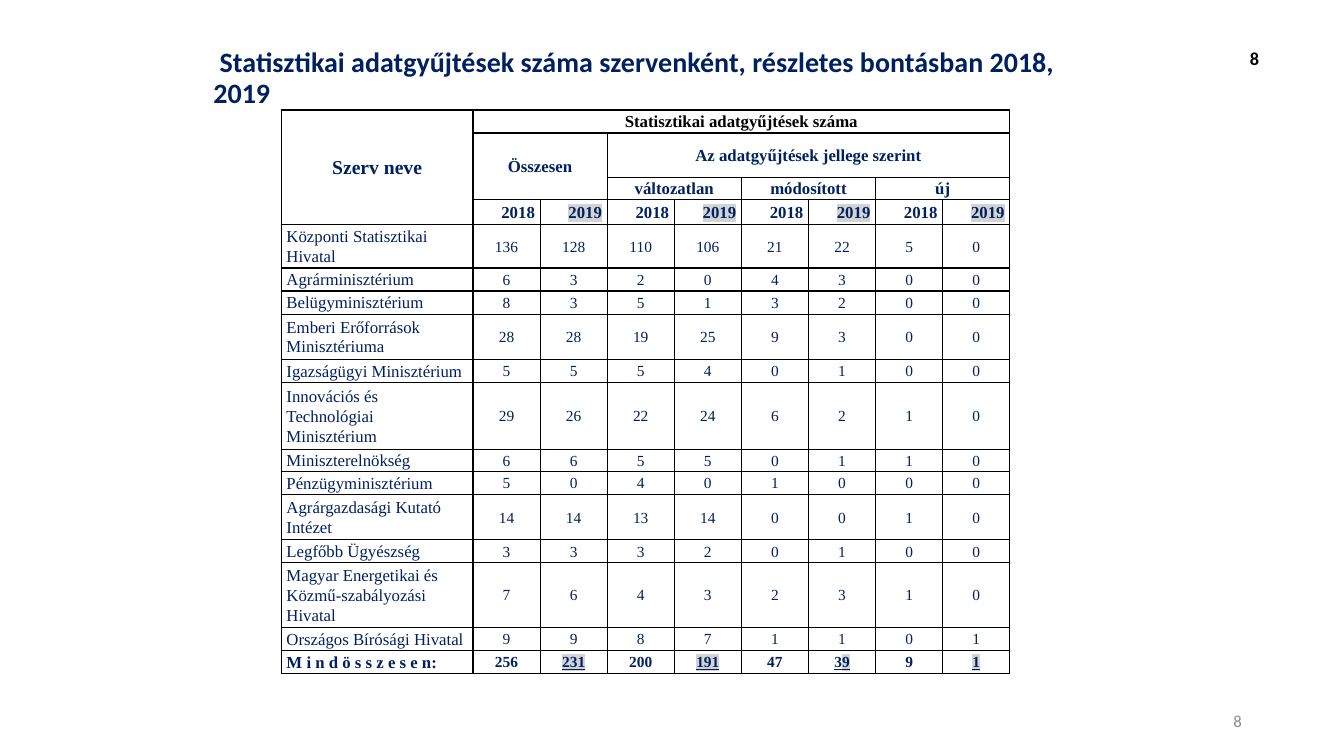
from lxml.etree import SubElement
from pptx import Presentation
from pptx.dml.color import RGBColor
from pptx.enum.text import MSO_ANCHOR as ANCHOR, PP_ALIGN as ALIGN
from pptx.oxml import parse_xml
from pptx.oxml.ns import nsdecls, qn
from pptx.util import Cm, Pt

NAVY = RGBColor(0x00, 0x20, 0x60)
BLACK = RGBColor(0x00, 0x00, 0x00)
GRAY = RGBColor(0x8C, 0x8C, 0x8C)
MARK = RGBColor(0xD3, 0xD3, 0xD3)
SANS, SERIF = "Calibri", "Times New Roman"

TITLE = " Statisztikai adatgyűjtések száma szervenként, részletes bontásban 2018, 2019"
HEADERS = [
    (0, 0, 3, 0, "Szerv neve", 14, NAVY),
    (0, 1, 0, 8, "Statisztikai adatgyűjtések száma", 12, BLACK),
    (1, 1, 2, 2, "Összesen", 12, NAVY),
    (1, 3, 1, 8, "Az adatgyűjtések jellege szerint", 12, NAVY),
    (2, 3, 2, 4, "változatlan", 12, NAVY),
    (2, 5, 2, 6, "módosított", 12, NAVY),
    (2, 7, 2, 8, "új", 12, NAVY),
]
HEADER_HEIGHTS = [0.58, 1.12, 0.56, 0.56]
BODY = [
    ("Központi Statisztikai Hivatal", 1.09, [136, 128, 110, 106, 21, 22, 5, 0]),
    ("Agrárminisztérium", 0.58, [6, 3, 2, 0, 4, 3, 0, 0]),
    ("Belügyminisztérium", 0.58, [8, 3, 5, 1, 3, 2, 0, 0]),
    ("Emberi Erőforrások Minisztériuma", 1.14, [28, 28, 19, 25, 9, 3, 0, 0]),
    ("Igazságügyi Minisztérium", 0.58, [5, 5, 5, 4, 0, 1, 0, 0]),
    ("Innovációs és Technológiai Minisztérium", 1.7, [29, 26, 22, 24, 6, 2, 1, 0]),
    ("Miniszterelnökség", 0.55, [6, 6, 5, 5, 0, 1, 1, 0]),
    ("Pénzügyminisztérium", 0.58, [5, 0, 4, 0, 1, 0, 0, 0]),
    ("Agrárgazdasági Kutató Intézet", 1.14, [14, 14, 13, 14, 0, 0, 1, 0]),
    ("Legfőbb Ügyészség", 0.58, [3, 3, 3, 2, 0, 1, 0, 0]),
    ("Magyar Energetikai és Közmű-szabályozási Hivatal", 1.63, [7, 6, 4, 3, 2, 3, 1, 0]),
    ("Országos Bírósági Hivatal", 0.58, [9, 9, 8, 7, 1, 1, 0, 1]),
]
TOTAL_HEIGHT = 0.58
TOTAL_LABEL = "M i n d ö s s z e s e n:"
TOTALS = [256, 231, 200, 191, 47, 39, 9, 1]
UNMARKED_DIGITS = {5: 1}


def write(p, text, size=12, font=SERIF, color=NAVY, bold=False, underline=False,
          mark=False, align=ALIGN.LEFT, spacing=1.07):
    p.alignment = align
    p.line_spacing = spacing
    r = p.add_run()
    r.text = text
    r.font.size = Pt(size)
    r.font.bold = bold
    r.font.underline = underline
    r.font.color.rgb = color
    r.font.name = font
    if mark:
        latin = r.font._element.find(qn("a:latin"))
        highlight = parse_xml(f'<a:highlight {nsdecls("a")}><a:srgbClr val="{MARK}"/></a:highlight>')
        latin.addprevious(highlight)


def add_label(slide, box, text, **fmt):
    tf = slide.shapes.add_textbox(*map(Cm, box)).text_frame
    tf.word_wrap = True
    tf.vertical_anchor = ANCHOR.MIDDLE
    write(tf.paragraphs[0], text, font=SANS, **fmt)


def prepare_cell(cell):
    cell.margin_left = cell.margin_right = Cm(0.13)
    cell.margin_top = cell.margin_bottom = 0
    cell.vertical_anchor = ANCHOR.MIDDLE
    tcPr = cell._tc.get_or_add_tcPr()
    for side in "LRTB":
        ln = SubElement(tcPr, qn(f"a:ln{side}"), w=str(Pt(1)))
        fill = SubElement(ln, qn("a:solidFill"))
        SubElement(fill, qn("a:srgbClr"), val=str(BLACK))
    cell.fill.background()


def add_statistics(slide, box):
    left, top, width, name_width = box
    heights = HEADER_HEIGHTS + [height for _, height, _ in BODY] + [TOTAL_HEIGHT]
    table = slide.shapes.add_table(len(heights), 9, Cm(left), Cm(top),
                                   Cm(width), Cm(sum(heights))).table
    table.first_row = table.horz_banding = False
    for row, height in zip(table.rows, heights):
        row.height = Cm(height)
    for i, column in enumerate(table.columns):
        column.width = Cm((width - name_width) / 8 if i else name_width)
    for cell in table.iter_cells():
        prepare_cell(cell)

    def para(row, col):
        return table.cell(row, col).text_frame.paragraphs[0]

    for row, col, last_row, last_col, text, size, color in HEADERS:
        table.cell(row, col).merge(table.cell(last_row, max(col, last_col)))
        write(para(row, col), text, size=size, color=color, bold=True, align=ALIGN.CENTER)
    for col in range(1, 9):
        later = col % 2 == 0
        write(para(3, col), "2019" if later else "2018", bold=True, mark=later, align=ALIGN.RIGHT)

    for row, (name, _, values) in enumerate(BODY, len(HEADER_HEIGHTS)):
        write(para(row, 0), name)
        for col, value in enumerate(values, 1):
            write(para(row, col), str(value), size=11, align=ALIGN.CENTER)

    last = len(heights) - 1
    write(para(last, 0), TOTAL_LABEL, bold=True)
    for i, value in enumerate(TOTALS):
        later = i % 2 == 1
        split = UNMARKED_DIGITS.get(i, 0)
        digits = str(value)
        for part, mark in ((digits[:split], False), (digits[split:], later)):
            if part:
                write(para(last, i + 1), part, size=11, bold=True, underline=later,
                      mark=mark, align=ALIGN.CENTER)


def main():
    prs = Presentation()
    prs.slide_width, prs.slide_height = Cm(33.87), Cm(19.05)
    slide = prs.slides.add_slide(prs.slide_layouts[6])
    add_label(slide, (23.93, 17.65, 7.62, 1.02), "8", color=GRAY, align=ALIGN.RIGHT, spacing=1.0)
    add_label(slide, (30.99, 0.97, 0.99, 1.02), "8", size=13, color=BLACK, bold=True,
              align=ALIGN.RIGHT, spacing=1.0)
    add_label(slide, (5.13, 1.04, 22.25, 1.9), TITLE, size=20, bold=True, spacing=0.9)
    add_statistics(slide, (7.09, 2.77, 18.36, 4.83))
    prs.save("out.pptx")


if __name__ == "__main__":
    main()
